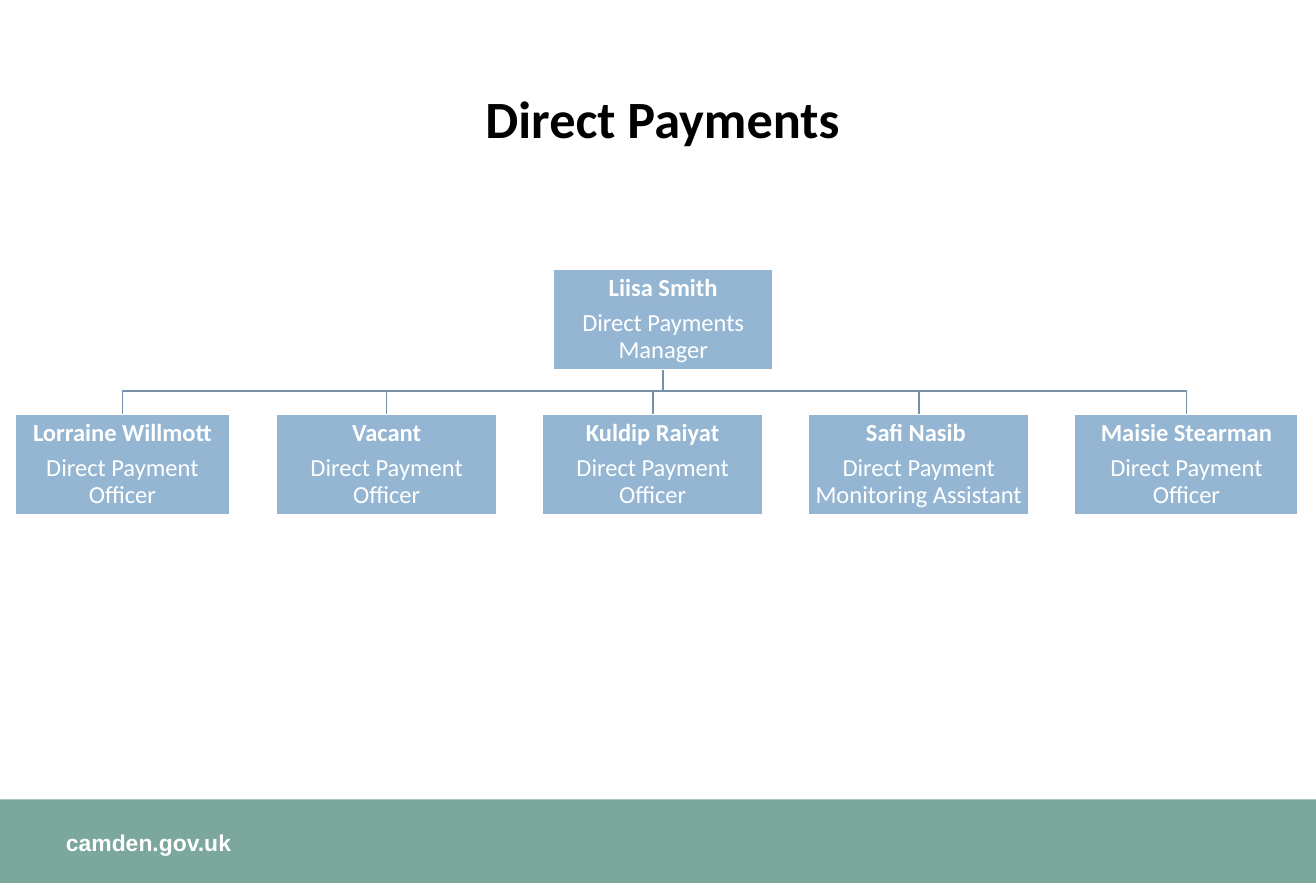
from dataclasses import dataclass

from pptx import Presentation
from pptx.dml.color import RGBColor
from pptx.enum.shapes import MSO_SHAPE
from pptx.enum.text import MSO_ANCHOR, PP_ALIGN
from pptx.util import Inches, Pt


@dataclass(frozen=True)
class Theme:
    white: RGBColor = RGBColor.from_string("FFFFFF")
    black: RGBColor = RGBColor.from_string("000000")
    box: RGBColor = RGBColor.from_string("94B6D2")
    branch: RGBColor = RGBColor.from_string("7792A8")
    footer: RGBColor = RGBColor.from_string("7BA79D")
    body_font: str = "Calibri"
    footer_font: str = "Arial"
    title_size: float = 32
    box_size: float = 15
    footer_size: float = 14
    line_width: float = 1
    line_spacing: float = 0.9


SLIDE_W, SLIDE_H = 11.18, 7.5
BOX_W, BOX_H = 1.87, 0.85
MANAGER_X, MANAGER_Y = 4.7, 2.29
BUS_Y, TEAM_Y = 3.32, 3.52
FOOTER_Y = 6.79

# left, width, name, role
TEAM = [
    (0.13, 1.82, "Lorraine Willmott", "Direct Payment Officer"),
    (2.35, BOX_W, "Vacant", "Direct Payment Officer"),
    (4.61, BOX_W, "Kuldip Raiyat", "Direct Payment Officer"),
    (6.87, BOX_W, "Safi Nasib ", "Direct Payment Monitoring Assistant"),
    (9.13, 1.9, "Maisie Stearman", "Direct Payment Officer"),
]


class OrgChart:
    def __init__(self, slide, theme):
        self.slide = slide
        self.theme = theme

    def outline(self, sp, color):
        sp.line.color.rgb = color
        sp.line.width = Pt(self.theme.line_width)

    def rect(self, x, y, w, h, fill):
        sp = self.slide.shapes.add_shape(
            MSO_SHAPE.RECTANGLE, Inches(x), Inches(y), Inches(w), Inches(h))
        sp.shadow.inherit = False
        sp.fill.solid()
        sp.fill.fore_color.rgb = fill
        sp.line.fill.background()
        return sp

    def style(self, p, font, size, color, bold, align):
        p.alignment = align
        p.font.name = font
        p.font.size = Pt(size)
        p.font.color.rgb = color
        p.font.bold = bold

    def set_frame(self, tf, anchor, left, top, right, bottom):
        tf.word_wrap = True
        tf.vertical_anchor = anchor
        tf.margin_left, tf.margin_top = Inches(left), Inches(top)
        tf.margin_right, tf.margin_bottom = Inches(right), Inches(bottom)

    def label(self, x, y, w, h, words):
        """Add a one-line text box and return its frame and paragraph."""
        tf = self.slide.shapes.add_textbox(
            Inches(x), Inches(y), Inches(w), Inches(h)).text_frame
        p = tf.paragraphs[0]
        p.text = words
        return tf, p

    def title(self, words):
        t = self.theme
        tf, p = self.label(0.81, 0.62, 9.64, 0.82, words)
        self.set_frame(tf, MSO_ANCHOR.MIDDLE, 0.1, 0.05, 0.1, 0.05)
        p.line_spacing = t.line_spacing
        self.style(p, t.body_font, t.title_size, t.black, True,
                   PP_ALIGN.CENTER)

    def footer(self, words):
        t = self.theme
        self.rect(0, FOOTER_Y, SLIDE_W, SLIDE_H - FOOTER_Y, t.footer)
        tf, p = self.label(0.56, 7.04, 4.61, 0.24, words)
        self.set_frame(tf, MSO_ANCHOR.TOP, 0, 0, 0.1, 0)
        self.style(p, t.footer_font, t.footer_size, t.white, True,
                   PP_ALIGN.LEFT)

    def person(self, x, y, w, name, role):
        t = self.theme
        sp = self.rect(x, y, w, BOX_H, t.box)
        self.outline(sp, t.white)
        tf = sp.text_frame
        self.set_frame(tf, MSO_ANCHOR.MIDDLE, 0.01, 0.01, 0.01, 0.01)
        for p, words, bold in ((tf.paragraphs[0], name, True),
                               (tf.add_paragraph(), role, False)):
            p.text = words
            p.line_spacing = t.line_spacing
            p.space_after = Pt(0.35 * t.box_size)
            self.style(p, t.body_font, t.box_size, t.white, bold,
                       PP_ALIGN.CENTER)

    def branch(self, x1, y1, x2, y2):
        """Draw a stepped line that turns at the height of BUS_Y."""
        ff = self.slide.shapes.build_freeform(Inches(x1), Inches(y1))
        ff.add_line_segments(
            [(Inches(x), Inches(y))
             for x, y in ((x1, BUS_Y), (x2, BUS_Y), (x2, y2))], close=False)
        sp = ff.convert_to_shape()
        sp.shadow.inherit = False
        sp.fill.background()
        self.outline(sp, self.theme.branch)


def main():
    prs = Presentation()
    prs.slide_width, prs.slide_height = Inches(SLIDE_W), Inches(SLIDE_H)
    chart = OrgChart(prs.slides.add_slide(prs.slide_layouts[6]), Theme())

    chart.footer("camden.gov.uk")
    chart.title("Direct Payments")

    for x, w, _, _ in reversed(TEAM):
        chart.branch(MANAGER_X + BOX_W / 2, MANAGER_Y + BOX_H,
                     x + w / 2, TEAM_Y)
    chart.person(MANAGER_X, MANAGER_Y, BOX_W,
                 "Liisa Smith", "Direct Payments Manager")
    for x, w, name, role in TEAM:
        chart.person(x, TEAM_Y, w, name, role)

    prs.save("out.pptx")


if __name__ == "__main__":
    main()
